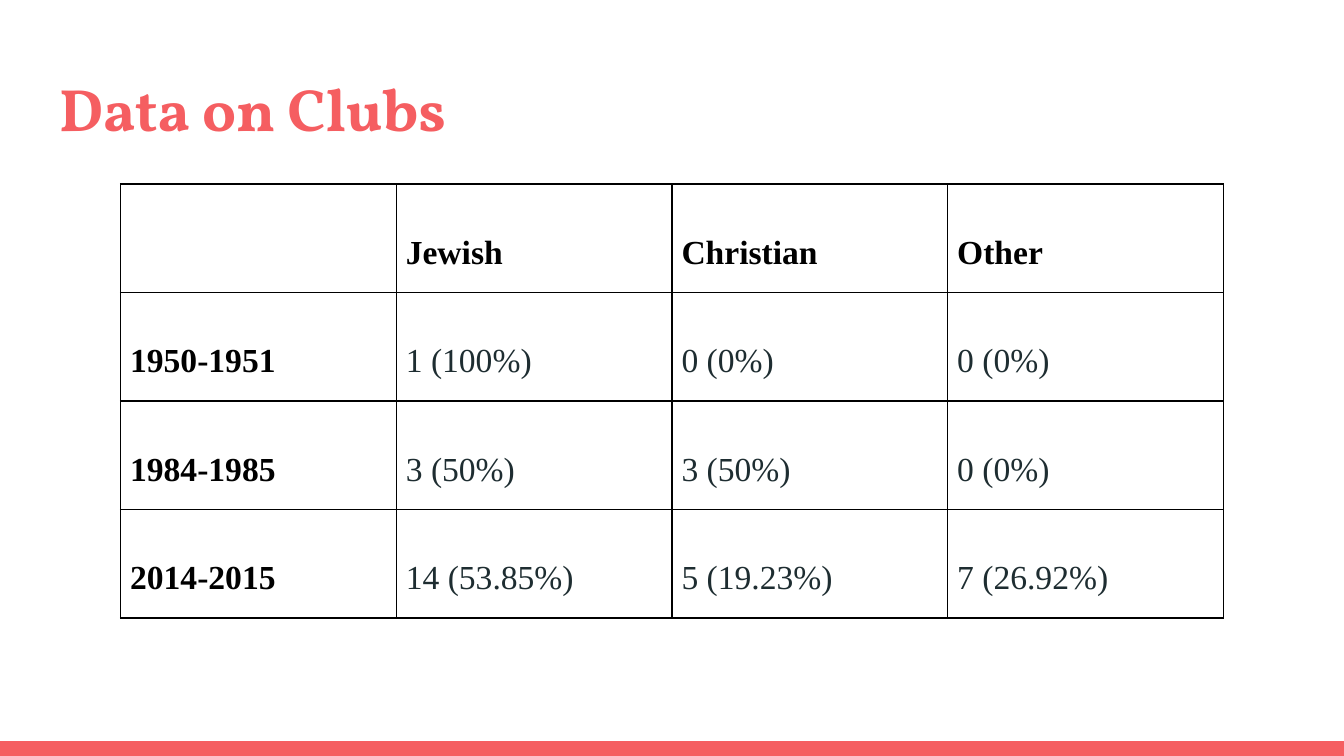
import pptx
import pptx.util
import pptx.dml.color
import pptx.enum.shapes
import pptx.enum.text
import pptx.oxml
import pptx.oxml.ns

Cm = pptx.util.Cm
Pt = pptx.util.Pt
HUES = {"coral": "F55E61", "black": "000000", "slate": "1E2D31"}
HEAD = {"name": "Vollkorn", "size": Pt(32), "bold": True}
LABEL = {"name": "Times New Roman", "size": Pt(18), "bold": True}
VALUE = {**LABEL, "bold": False}
INSETS = {"margin_left": Cm(0.18), "margin_right": Cm(0.18),
          "margin_top": Cm(0.25), "margin_bottom": Cm(0.25)}
CLUBS = [
    ["", "Jewish", "Christian", "Other"],
    ["1950-1951", "1 (100%)", "0 (0%)", "0 (0%)"],
    ["1984-1985", "3 (50%)", "3 (50%)", "0 (0%)"],
    ["2014-2015", "14 (53.85%)", "5 (19.23%)", "7 (26.92%)"],
]


def shade(hue):
    return pptx.dml.color.RGBColor.from_string(HUES[hue])


def assign(item, values):
    for key, value in values.items():
        setattr(item, key, value)


def write(para, text, style, hue):
    run = para.add_run()
    run.text = text
    assign(run.font, style)
    run.font.color.rgb = shade(hue)


def border(cell):
    props = cell._tc.get_or_add_tcPr()
    for side in "LRTB":
        props.append(pptx.oxml.parse_xml(
            f'<a:ln{side} {pptx.oxml.ns.nsdecls("a")} w="{Pt(1)}"><a:solidFill>'
            f'<a:srgbClr val="{HUES["black"]}"/></a:solidFill></a:ln{side}>'))


def add_bar(slide, left, top, width, height):
    kind = pptx.enum.shapes.MSO_SHAPE.RECTANGLE
    bar = slide.shapes.add_shape(kind, left, top, width, height)
    bar.shadow.inherit = False
    bar.fill.solid()
    bar.fill.fore_color.rgb = shade("coral")
    bar.line.fill.background()


def add_title(slide, left, top, width, height):
    frame = slide.shapes.add_textbox(left, top, width, height).text_frame
    pad = Cm(0.25)
    assign(frame, {"word_wrap": True, "margin_left": pad, "margin_right": pad,
                   "margin_top": pad, "margin_bottom": pad,
                   "vertical_anchor": pptx.enum.text.MSO_ANCHOR.TOP})
    write(frame.paragraphs[0], "Data on Clubs", HEAD, "coral")


def add_grid(slide, left, top, width, height):
    grid = slide.shapes.add_table(len(CLUBS), len(CLUBS[0]),
                                  left, top, width, height).table
    assign(grid, {"first_row": False, "horz_banding": False})
    for r, row in enumerate(CLUBS):
        for c, text in enumerate(row):
            cell = grid.cell(r, c)
            assign(cell, INSETS)
            border(cell)
            cell.fill.background()
            if text:
                para = cell.text_frame.paragraphs[0]
                para.line_spacing = 2.0
                label = r == 0 or c == 0
                write(para, text, LABEL if label else VALUE,
                      "black" if label else "slate")


def main():
    deck = pptx.Presentation()
    assign(deck, {"slide_width": Cm(25.4), "slide_height": Cm(14.29)})
    slide = deck.slides.add_slide(deck.slide_layouts[6])
    add_bar(slide, 0, Cm(14.01), deck.slide_width, Cm(0.28))
    add_grid(slide, Cm(2.28), Cm(3.48), Cm(20.84), Cm(8.2))
    add_title(slide, Cm(0.87), Cm(1.1), Cm(23.67), Cm(1.73))
    deck.save("out.pptx")


if __name__ == "__main__":
    main()
